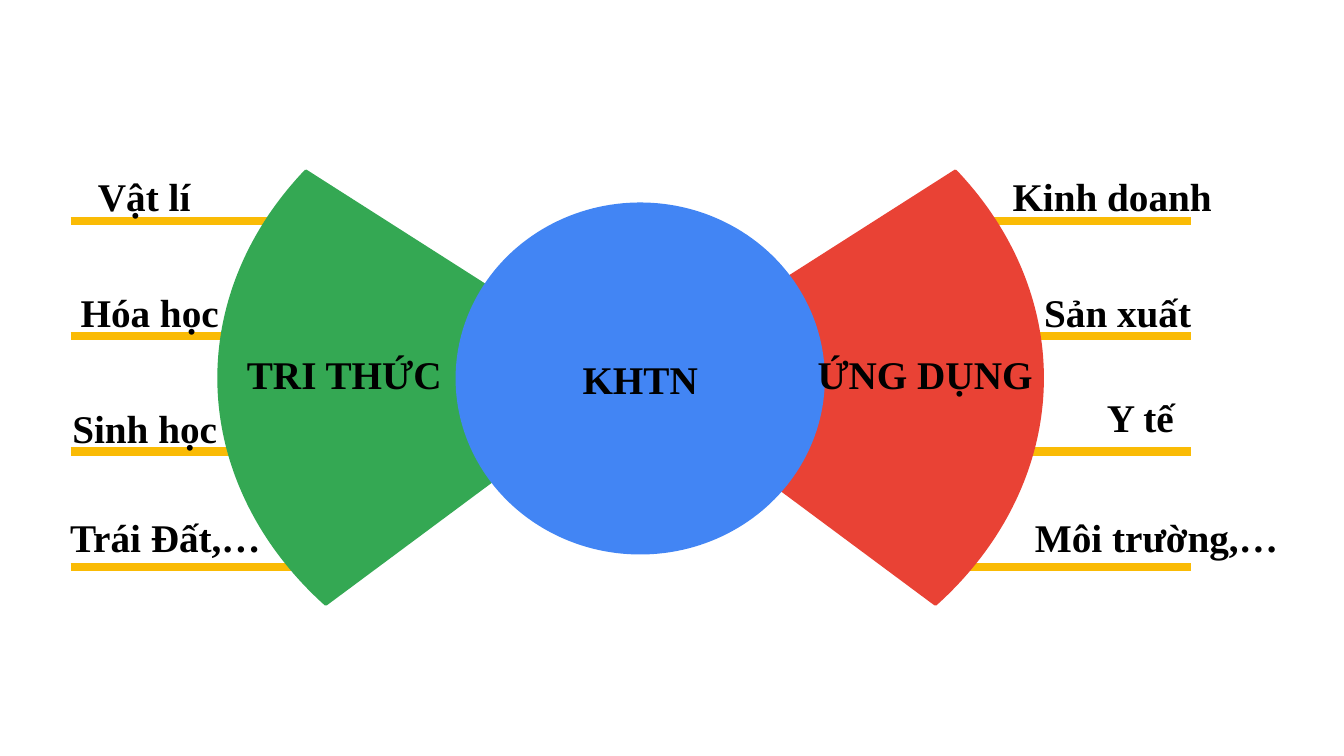
"""Build the slide on natural science: knowledge fields and applications."""
from dataclasses import dataclass

from lxml import etree
from pptx import Presentation
from pptx.dml.color import RGBColor
from pptx.enum.shapes import MSO_CONNECTOR, MSO_SHAPE
from pptx.enum.text import MSO_ANCHOR, MSO_AUTO_SIZE, PP_ALIGN
from pptx.oxml.ns import qn
from pptx.shapes.autoshape import Shape
from pptx.slide import Slide
from pptx.text.text import TextFrame
from pptx.util import Inches, Pt

STRAIGHT = MSO_CONNECTOR.STRAIGHT
PIE, ELLIPSE = MSO_SHAPE.PIE, MSO_SHAPE.OVAL
MIDDLE = MSO_ANCHOR.MIDDLE
GROW = MSO_AUTO_SIZE.SHAPE_TO_FIT_TEXT
LEFT, CENTER = PP_ALIGN.LEFT, PP_ALIGN.CENTER

COLOURS = {"black": "000000", "yellow": "FABB05", "red": "E94235",
           "green": "34A853", "blue": "4285F4"}
FONT, FONT_SIZE = "Times New Roman", 28
MIRROR_WIDTH = 12.51
BRANCH_START, BRANCH_TOP, BRANCH_STEP = 0.7, 2.19, 1.145
BRANCH_ENDS = (2.83, 2.35, 2.35, 2.91)
PIE_ANGLES = (143.39, 212.53)
ADJUSTMENT_PER_DEGREE = 0.6
LABEL_HEIGHT = 0.57


@dataclass(frozen=True)
class Label:
    """A text box with its place and alignment."""
    text: str
    left: float
    top: float
    width: float
    align: PP_ALIGN = CENTER


@dataclass(frozen=True)
class Figure:
    """A filled preset shape."""
    preset: MSO_SHAPE
    left: float
    top: float
    width: float
    height: float
    colour: str
    line_width: float


RED_FAN = Figure(PIE, 2.17, 0.41, 8.17, 6.68, "red", 2)
GREEN_FAN = Figure(PIE, 2.17, 0.41, 8.17, 6.68, "green", 2)
HUB = Figure(ELLIPSE, 4.55, 2.04, 3.6, 3.43, "blue", 4.5)

FAN_LABELS = (
    Label("TRI THỨC", 2.35, 3.43, 2.32, LEFT),
    Label("ỨNG DỤNG", 8.01, 3.43, 2.52, LEFT),
)
BRANCH_LABELS = (
    Label("Vật lí", 0.69, 1.66, 1.48),
    Label("Hóa học", 0.5, 2.81, 1.97),
    Label("Sinh học", 0.45, 3.96, 1.97),
    Label("Trái Đất,…", 0.43, 5.04, 2.42),
    Label("Kinh doanh", 9.71, 1.66, 2.64),
    Label("Sản xuất", 9.9, 2.81, 2.37),
    Label("Y tế", 10.44, 3.85, 1.74),
    Label("Môi trường,…", 9.82, 5.04, 3.3),
)


def colour(name: str) -> RGBColor:
    """Return the named colour."""
    return RGBColor.from_string(COLOURS[name])


def write(frame: TextFrame, text: str, align: PP_ALIGN) -> None:
    """Put one bold line of text in a frame."""
    frame.text = text
    frame.word_wrap = True
    para = frame.paragraphs[0]
    para.alignment = align
    font = para.runs[0].font
    font.name, font.size, font.bold = FONT, Pt(FONT_SIZE), True
    font.color.rgb = colour("black")


def add_branch(page: Slide, start: float, end: float, top: float) -> None:
    """Draw a horizontal branch line."""
    branch = page.shapes.add_connector(
        STRAIGHT, Inches(start), Inches(top), Inches(end), Inches(top))
    branch.line.color.rgb = colour("yellow")
    branch.line.width = Pt(6)
    etree.SubElement(branch.element.spPr, qn("a:effectLst"))


def add_figure(page: Slide, figure: Figure) -> Shape:
    """Draw a filled shape with a line of the same colour."""
    shape = page.shapes.add_shape(
        figure.preset, Inches(figure.left), Inches(figure.top),
        Inches(figure.width), Inches(figure.height))
    shape.shadow.inherit = False
    shape.fill.solid()
    shape.fill.fore_color.rgb = colour(figure.colour)
    shape.line.color.rgb = colour(figure.colour)
    shape.line.width = Pt(figure.line_width)
    return shape


def add_fan(page: Slide, figure: Figure, mirrored: bool) -> None:
    """Draw a pie sector opening to the left, or to the right if mirrored."""
    fan = add_figure(page, figure)
    for index, angle in enumerate(PIE_ANGLES):
        fan.adjustments[index] = angle * ADJUSTMENT_PER_DEGREE
    if mirrored:
        fan.element.spPr.xfrm.set("flipH", "1")


def add_label(page: Slide, label: Label) -> None:
    """Draw a text box."""
    box = page.shapes.add_textbox(Inches(label.left), Inches(label.top),
                                  Inches(label.width), Inches(LABEL_HEIGHT))
    write(box.text_frame, label.text, label.align)
    box.text_frame.auto_size = GROW


def main() -> None:
    """Build and save the deck."""
    deck = Presentation()
    deck.slide_width, deck.slide_height = Inches(13.33), Inches(7.5)
    page = deck.slides.add_slide(deck.slide_layouts[6])

    for row, end in enumerate(BRANCH_ENDS):
        top = BRANCH_TOP + row * BRANCH_STEP
        add_branch(page, BRANCH_START, end, top)
        add_branch(page, MIRROR_WIDTH - BRANCH_START, MIRROR_WIDTH - end, top)

    add_fan(page, RED_FAN, mirrored=True)
    add_fan(page, GREEN_FAN, mirrored=False)
    hub = add_figure(page, HUB)
    write(hub.text_frame, "KHTN", CENTER)
    hub.text_frame.vertical_anchor = MIDDLE

    for label in FAN_LABELS + BRANCH_LABELS:
        add_label(page, label)
    deck.save("out.pptx")


if __name__ == "__main__":
    main()
